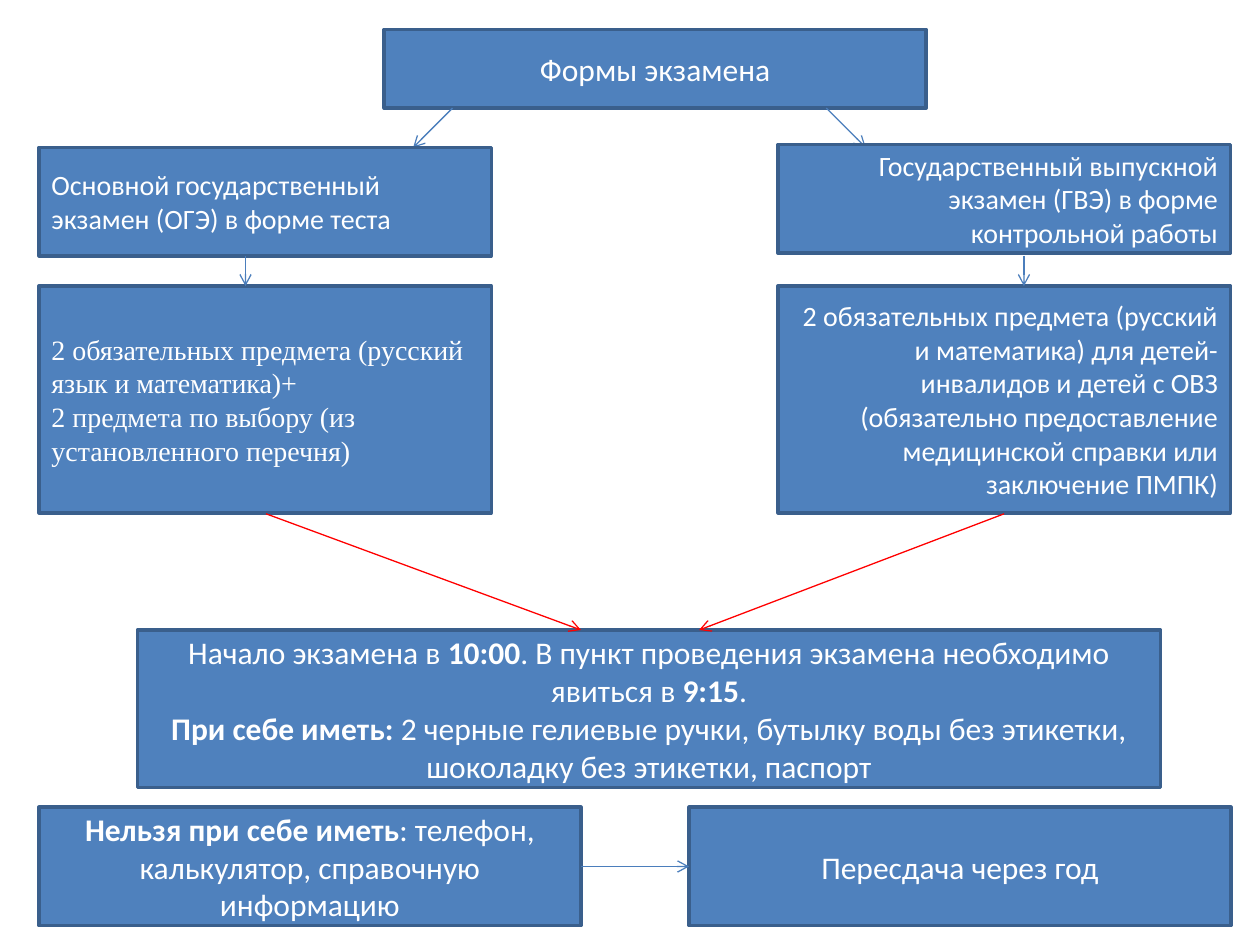
import pptx
import pptx.dml.color
import pptx.enum.shapes
import pptx.enum.text
import pptx.oxml.ns
import pptx.util
from lxml import etree

Pt = pptx.util.Pt
ALIGN = pptx.enum.text.PP_ALIGN
COLORS = {"fill": "4F81BD", "border": "3A5F8C", "text": "FFFFFF",
          "arrow": "4B7EBC", "red": "FF0000"}


def rgb(name):
    return pptx.dml.color.RGBColor.from_string(COLORS[name])


def add_block(slide, box, paragraphs, align=ALIGN.CENTER, size=18, font="Calibri"):
    """Add a filled rectangle; text between ** marks is bold."""
    block = slide.shapes.add_shape(
        pptx.enum.shapes.MSO_SHAPE.RECTANGLE, *map(Pt, box))
    block.shadow.inherit = False
    block.fill.solid()
    block.fill.fore_color.rgb = rgb("fill")
    block.line.color.rgb = rgb("border")
    block.line.width = Pt(2)
    frame = block.text_frame
    frame.word_wrap = True
    frame.vertical_anchor = pptx.enum.text.MSO_ANCHOR.MIDDLE
    for index, wording in enumerate(paragraphs):
        paragraph = frame.add_paragraph() if index else frame.paragraphs[0]
        paragraph.alignment = align
        for part, words in enumerate(wording.split("**")):
            if not words:
                continue
            run = paragraph.add_run()
            run.text = words
            style = {"name": font, "size": Pt(size), "bold": part % 2 == 1}
            for attribute, value in style.items():
                setattr(run.font, attribute, value)
            run.font.color.rgb = rgb("text")


def add_arrow(slide, start, end, color="arrow"):
    arrow = slide.shapes.add_connector(
        pptx.enum.shapes.MSO_CONNECTOR.STRAIGHT, *map(Pt, (*start, *end)))
    arrow.line.color.rgb = rgb(color)
    arrow.line.width = Pt(0.75)
    qn = pptx.oxml.ns.qn
    etree.SubElement(arrow.line._get_or_add_ln(), qn("a:tailEnd"), type="arrow")
    etree.SubElement(arrow._element.spPr, qn("a:effectLst"))


def add_heading(slide, box):
    """Add the title block and the two arrows that fork from it."""
    left, top, width, height = box
    bottom = top + height
    add_block(slide, box, ["Формы экзамена"])
    for offset, shift in ((39, -22.5), (width - 57, 22.5)):
        x = left + offset
        add_arrow(slide, (x, bottom), (x + shift, bottom + 22.5))


def add_exam_form(slide, box, form, subjects, align, arrow_offset, font="Calibri"):
    """Add an exam form at the top of the box and its subjects at the bottom."""
    left, top, width, height = box
    subjects_height = 129.6
    subjects_top = top + height - subjects_height
    add_block(slide, (left, top, width, 62), [form], align, 16)
    add_block(slide, (left, subjects_top, width, subjects_height),
              subjects, align, 16, font)
    x = left + arrow_offset
    add_arrow(slide, (x, subjects_top - 17.3), (x, subjects_top))


def add_exam_day(slide, box):
    """Add the exam day rules and the red arrows that lead to them."""
    left, top, width, height = box
    add_block(slide, box, [
        "Начало экзамена в **10:00**. В пункт проведения экзамена необходимо "
        "явиться в **9:15**.",
        "**При себе иметь: **2 черные гелиевые ручки, бутылку воды без этикетки, "
        "шоколадку без этикетки, паспорт",
    ])
    for start, end in ((73.5, 253.5), (495.3, 321)):
        add_arrow(slide, (left + start, top - 66.4), (left + end, top), "red")


def add_ban(slide, box):
    """Add the forbidden items and the consequence, joined by an arrow."""
    left, top, width, height = box
    block_width = 309.6
    right_block = left + width - block_width
    add_block(slide, (left, top, block_width, height),
              ["**Нельзя при себе иметь**: телефон, калькулятор, справочную информацию"])
    add_block(slide, (right_block, top, block_width, height), ["Пересдача через год"])
    middle = top + height / 2
    add_arrow(slide, (left + block_width, middle), (right_block, middle))


def main():
    deck = pptx.Presentation()
    deck.slide_width, deck.slide_height = Pt(720), Pt(540)
    slide = deck.slides.add_slide(deck.slide_layouts[6])

    add_heading(slide, (219.6, 16.8, 309.6, 45))
    form_width, arrow_offset = 258.5, 118
    add_exam_form(
        slide, (22.3, 84.2, form_width, 208.9),
        "Основной государственный экзамен (ОГЭ) в форме теста",
        ["2 обязательных предмета (русский язык и математика)+",
         "2 предмета по выбору (из установленного перечня)"],
        ALIGN.LEFT, arrow_offset, "Times New Roman")
    add_exam_form(
        slide, (444.6, 82.6, form_width, 210.5),
        "Государственный выпускной экзамен (ГВЭ) в форме контрольной работы",
        ["2 обязательных предмета (русский и математика) для детей-инвалидов "
         "и детей с ОВЗ (обязательно предоставление медицинской справки или "
         "заключение ПМПК)"],
        ALIGN.RIGHT, form_width - arrow_offset)
    add_exam_day(slide, (78.5, 360, 584.8, 90))
    add_ban(slide, (22.3, 461.3, 681.1, 67.7))

    deck.save("out.pptx")


if __name__ == "__main__":
    main()
